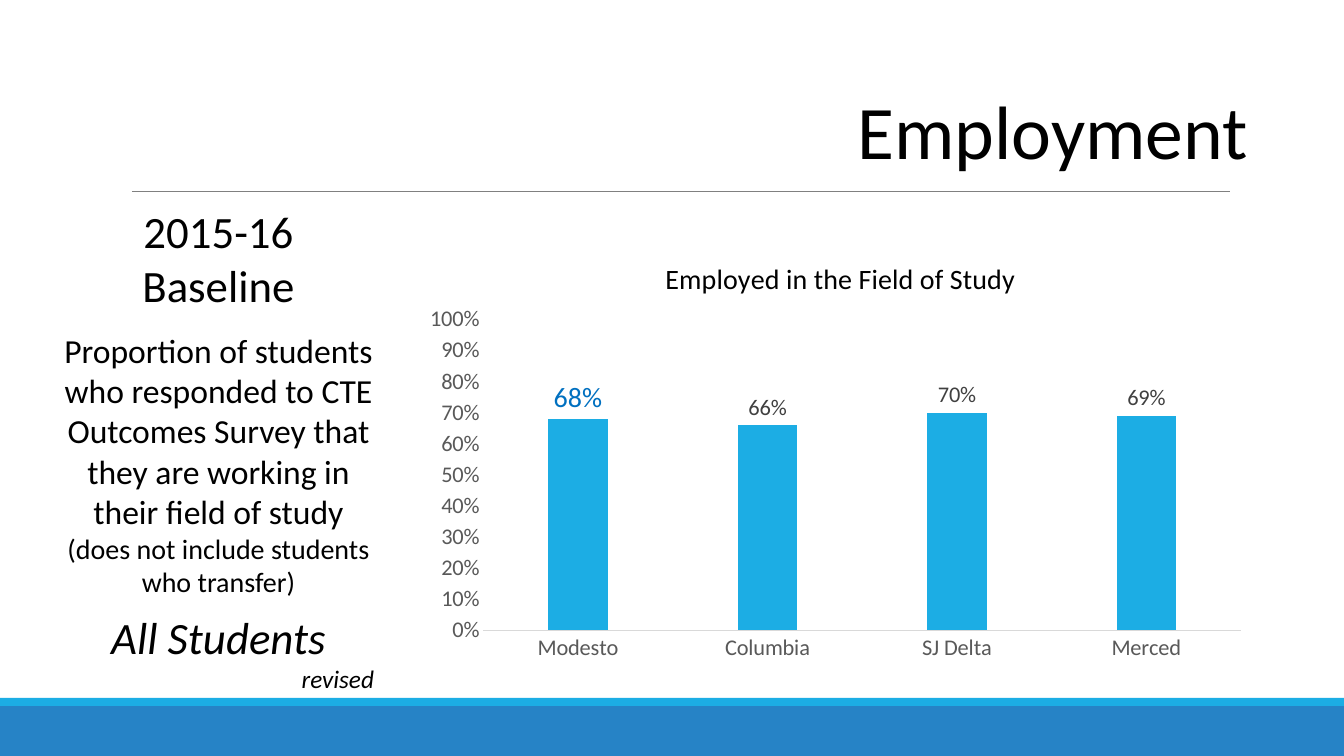
from lxml.etree import SubElement as Sub, Element as Elem
from pptx import Presentation
from pptx.chart.data import CategoryChartData as Data
from pptx.dml.color import RGBColor as RGB
from pptx.enum.chart import XL_CHART_TYPE as Kind, XL_LABEL_POSITION as Spot, XL_TICK_MARK as Tick
from pptx.enum.shapes import MSO_CONNECTOR as Link, MSO_SHAPE as Form
from pptx.enum.text import PP_ALIGN as Align
from pptx.oxml.ns import qn
from pptx.util import Emu, Pt

BLACK = RGB(0x00, 0x00, 0x00)
BLUE = RGB(0x26, 0x83, 0xC6)
CYAN = RGB(0x1C, 0xAD, 0xE4)
RULE = RGB(0x80, 0x80, 0x80)
AXIS = RGB(0xD9, 0xD9, 0xD9)
GRAY = RGB(0x59, 0x59, 0x59)
DARK = RGB(0x40, 0x40, 0x40)
MARK = RGB(0x00, 0x70, 0xC0)
SCALE = 914400 / 100.8


def px(n):
    return Emu(round(n * SCALE))


class Deck:
    face = "Calibri"

    def __init__(self, wide, high):
        self.deck = Presentation()
        self.deck.slide_width, self.deck.slide_height = px(wide), px(high)
        self.slide = self.deck.slides.add_slide(self.deck.slide_layouts[6])
        self.shapes = self.slide.shapes

    def style(self, font, size, color=BLACK, slant=False):
        font.name, font.size = self.face, Pt(size)
        font.bold, font.italic = False, slant
        font.color.rgb = color

    def band(self, box, color):
        bar = self.shapes.add_shape(Form.RECTANGLE, *map(px, box))
        bar.shadow.inherit = False
        bar.fill.solid()
        bar.fill.fore_color.rgb = color
        bar.line.fill.background()

    def rule(self, ends, color, width):
        line = self.shapes.add_connector(Link.STRAIGHT, *map(px, ends))
        line.line.color.rgb, line.line.width = color, Pt(width)
        Sub(line._element.spPr, qn("a:effectLst"))

    def text(self, box, paras, top=5):
        frame = self.shapes.add_textbox(*map(px, box)).text_frame
        frame.word_wrap = True
        frame.margin_left = frame.margin_right = px(10)
        frame.margin_top, frame.margin_bottom = px(top), px(5)
        for i, (words, size, align, gap, slant) in enumerate(paras):
            para = frame.add_paragraph() if i else frame.paragraphs[0]
            para.alignment, para.space_before = align, Pt(gap)
            run = para.add_run()
            run.text = words
            self.style(run.font, size, slant=slant)

    def place(self, host, index, **sides):
        for old in host.findall(qn("c:layout")):
            host.remove(old)
        layout = Elem(qn("c:layout"))
        host.insert(index, layout)
        manual = Sub(layout, qn("c:manualLayout"))
        if "w" in sides:
            Sub(manual, qn("c:layoutTarget")).set("val", "inner")
        for side in "xy":
            Sub(manual, qn(f"c:{side}Mode")).set("val", "edge")
        for side, share in sides.items():
            Sub(manual, qn(f"c:{side}")).set("val", str(share))

    def chart(self, box, title, names, values):
        data = Data(number_format="0%")
        data.categories = names
        data.add_series("Series 1", values)
        frame = self.shapes.add_chart(Kind.COLUMN_CLUSTERED, *map(px, box), data)
        chart = frame.chart
        self.style(chart.font, 10)
        chart.has_legend = False
        chart.has_title = True
        run = chart.chart_title.text_frame.paragraphs[0].add_run()
        run.text = title
        self.style(run.font, 20)
        self.place(chart.chart_title._element, 1, x=0.29, y=0.05)
        self.place(chart._chartSpace.chart.plotArea, 0, x=0.08, y=0.2, w=0.9, h=0.71)
        for axis in (chart.category_axis, chart.value_axis):
            axis.major_tick_mark = axis.minor_tick_mark = Tick.NONE
            axis.has_major_gridlines = False
            self.style(axis.tick_labels.font, 16, GRAY)
        edge = chart.category_axis.format.line
        edge.color.rgb, edge.width = AXIS, Pt(0.75)
        scale = chart.value_axis
        scale.format.line.fill.background()
        scale.minimum_scale, scale.maximum_scale, scale.major_unit = 0, 1, 0.1
        scale.tick_labels.number_format = "0%"
        scale.tick_labels.number_format_is_linked = False
        plot = chart.plots[0]
        plot.gap_width, plot.overlap, plot.vary_by_categories = 219, -27, False
        bars = plot.series[0]
        bars.format.fill.solid()
        bars.format.fill.fore_color.rgb = CYAN
        labels = bars.data_labels
        labels.show_value, labels.position = True, Spot.OUTSIDE_END
        labels.number_format, labels.number_format_is_linked = "0%", False
        self.style(labels.font, 16, DARK)
        first = bars.points[0].data_label
        self.style(first.font, 20, MARK)
        first.position = Spot.OUTSIDE_END


def main():
    page = Deck(1344, 756)
    page.band((0, 706, 1344, 50), BLUE)
    page.band((0, 698, 1344, 8), CYAN)
    page.rule((132, 191, 1230, 191), RULE, 0.5)
    page.text((548, 79, 710, 101), [("Employment", 54, Align.RIGHT, 0, False)])
    page.text((53, 180, 331, 541), [
        ("2015-16 Baseline", 32, Align.CENTER, 0, False),
        ("Proportion of students who responded to CTE Outcomes Survey "
         "that they are working in their field of study", 24, Align.CENTER, 13, False),
        ("(does not include students who transfer)", 20, Align.CENTER, 0, False),
        ("All Students", 32, Align.CENTER, 8, True),
        ("revised", 18, Align.RIGHT, 0, True),
    ], top=24)
    page.chart((416, 232, 842, 438), "Employed in the Field of Study",
               ("Modesto", "Columbia", "SJ Delta", "Merced"), (0.68, 0.66, 0.7, 0.69))
    page.deck.save("out.pptx")


if __name__ == "__main__":
    main()
